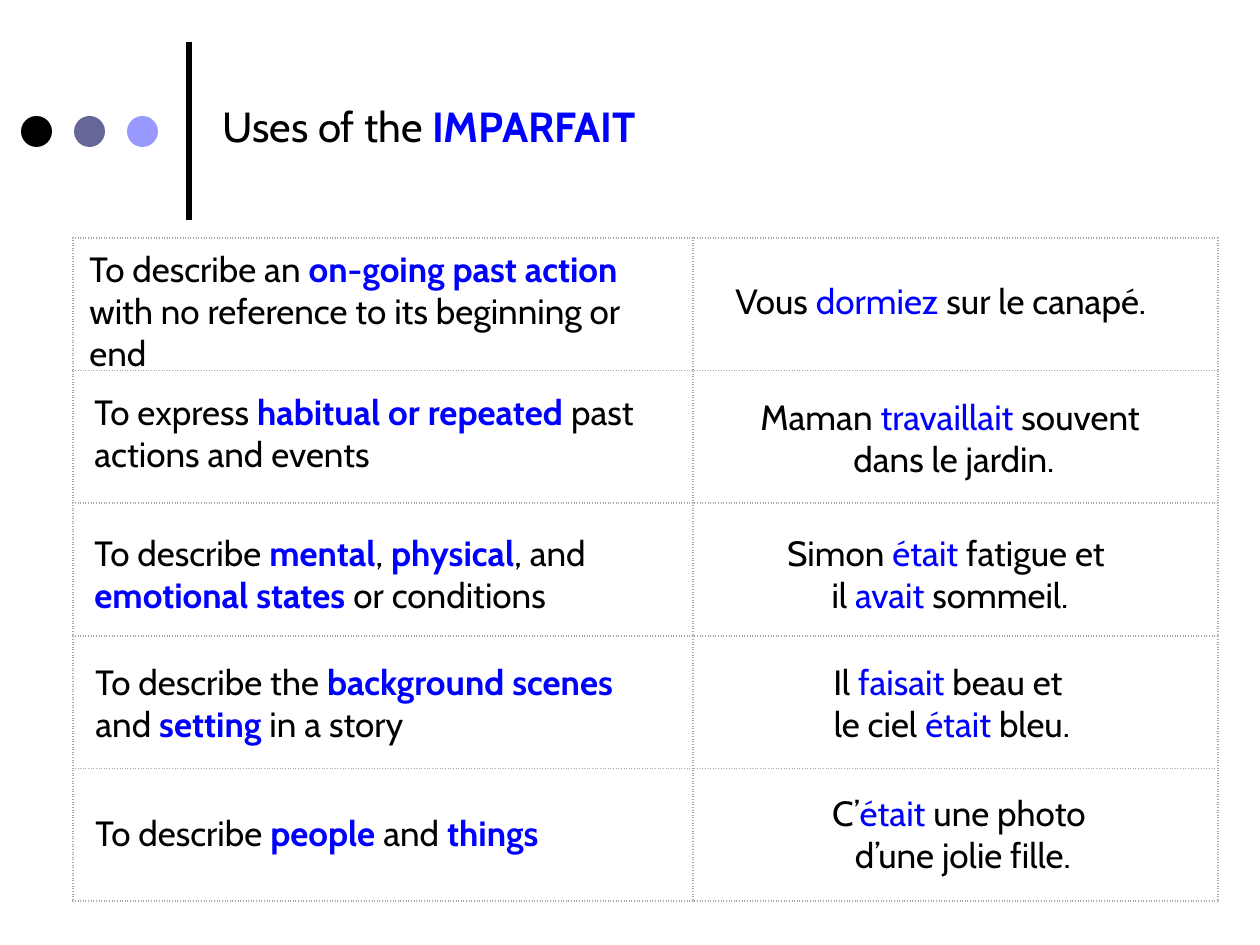
import pptx
import pptx.util
import pptx.dml.color
import pptx.enum.shapes
import pptx.enum.text
import pptx.oxml
import pptx.oxml.ns

PX = 914400 / 126
BLACK, BLUE, GREY = "000000", "0000FF", "A6A6A6"
ALIGN = pptx.enum.text.PP_ALIGN
FRAME = {"word_wrap": True, "auto_size": pptx.enum.text.MSO_AUTO_SIZE.NONE,
         "vertical_anchor": pptx.enum.text.MSO_ANCHOR.TOP}
TITLE = "Uses of the *IMPARFAIT*"
DOTS = [BLACK, "666699", "9999FF"]
COLS = [620, 525]
ROWS = 5
USES = [
    (77, 241, 140, "To describe an *on-going past action *with no reference to its beginning or end"),
    (82, 384, 97, "To express *habitual or repeated *past actions and events"),
    (82, 525, 97, "To describe *mental*, *physical*, and *emotional states *or conditions"),
    (83, 654, 140, "To describe the *background scenes *and *setting *in a story"),
    (83, 805, 55, "To describe *people *and *things*"),
]
SAMPLES = [
    (723, 273, 55, ALIGN.LEFT, ["Vous *dormiez* sur le canapé."]),
    (716, 389, 97, ALIGN.CENTER, ["Maman *travaillait *souvent ", "dans le jardin."]),
    (712, 525, 97, ALIGN.CENTER, ["Simon *était *fatigue et ", "il *avait *sommeil."]),
    (714, 654, 97, ALIGN.CENTER, ["Il *faisait *beau et ", "le ciel *était *bleu."]),
    (725, 785, 97, ALIGN.CENTER, ["C’*était *une photo ", "d’une jolie fille."]),
]


def emu(*nums):
    return [round(n * PX) for n in nums]


def color(code):
    return pptx.dml.color.RGBColor.from_string(code)


def assign(thing, vals):
    for name, val in vals.items():
        setattr(thing, name, val)


def write(frame, lines, size, align, bold):
    assign(frame, FRAME)
    for i, line in enumerate(lines):
        para = frame.add_paragraph() if i else frame.paragraphs[0]
        para.alignment = align
        for j, part in enumerate(line.split("*")):
            if part:
                run = para.add_run()
                run.text = part
                assign(run.font, {"name": "Cabin", "size": pptx.util.Pt(size),
                                  "bold": bold and j % 2 == 1})
                run.font.color.rgb = color(BLUE if j % 2 else BLACK)


def border(cell):
    props = cell._tc.get_or_add_tcPr()
    for i, side in enumerate("LRTB"):
        props.insert(i, pptx.oxml.parse_xml(
            f'<a:ln{side} {pptx.oxml.ns.nsdecls("a")} w="12700"><a:solidFill>'
            f'<a:srgbClr val="{GREY}"/></a:solidFill><a:prstDash val="sysDot"/></a:ln{side}>'))


def main():
    deck = pptx.Presentation()
    deck.slide_width, deck.slide_height = emu(1260, 945)
    slide = deck.slides.add_slide(deck.slide_layouts[5])
    shapes = slide.shapes

    title = shapes.title
    title.left, title.top, title.width, title.height = emu(210, 94, 1008, 63)
    write(title.text_frame, [TITLE], 24, ALIGN.LEFT, True)

    rule = shapes.add_connector(pptx.enum.shapes.MSO_CONNECTOR.STRAIGHT, *emu(189, 220, 189, 42))
    rule.line.color.rgb = color(BLACK)
    rule.line.width = pptx.util.Pt(3)
    rule._element.spPr.append(pptx.oxml.parse_xml(
        f'<a:effectLst {pptx.oxml.ns.nsdecls("a")}/>'))

    for i, code in enumerate(DOTS):
        dot = shapes.add_shape(pptx.enum.shapes.MSO_SHAPE.OVAL, *emu(21 + 53 * i, 116, 31, 31))
        dot.shadow.inherit = False
        dot.fill.solid()
        dot.fill.fore_color.rgb = color(code)
        dot.line.fill.background()

    grid = shapes.add_table(ROWS, len(COLS), *emu(73, 238, sum(COLS), 663)).table
    assign(grid, {"first_row": False, "horz_banding": False})
    for col, wide in zip(grid.columns, emu(*COLS)):
        col.width = wide
    for cell in grid.iter_cells():
        cell.fill.background()
        border(cell)

    for use, sample in zip(USES, SAMPLES):
        x, y, high, text = use
        box = shapes.add_textbox(*emu(x, y, 601, high))
        write(box.text_frame, [text], 20, ALIGN.LEFT, True)
        x, y, high, align, lines = sample
        box = shapes.add_textbox(*emu(x, y, 476, high))
        write(box.text_frame, lines, 20, align, False)

    deck.save("out.pptx")


if __name__ == "__main__":
    main()
